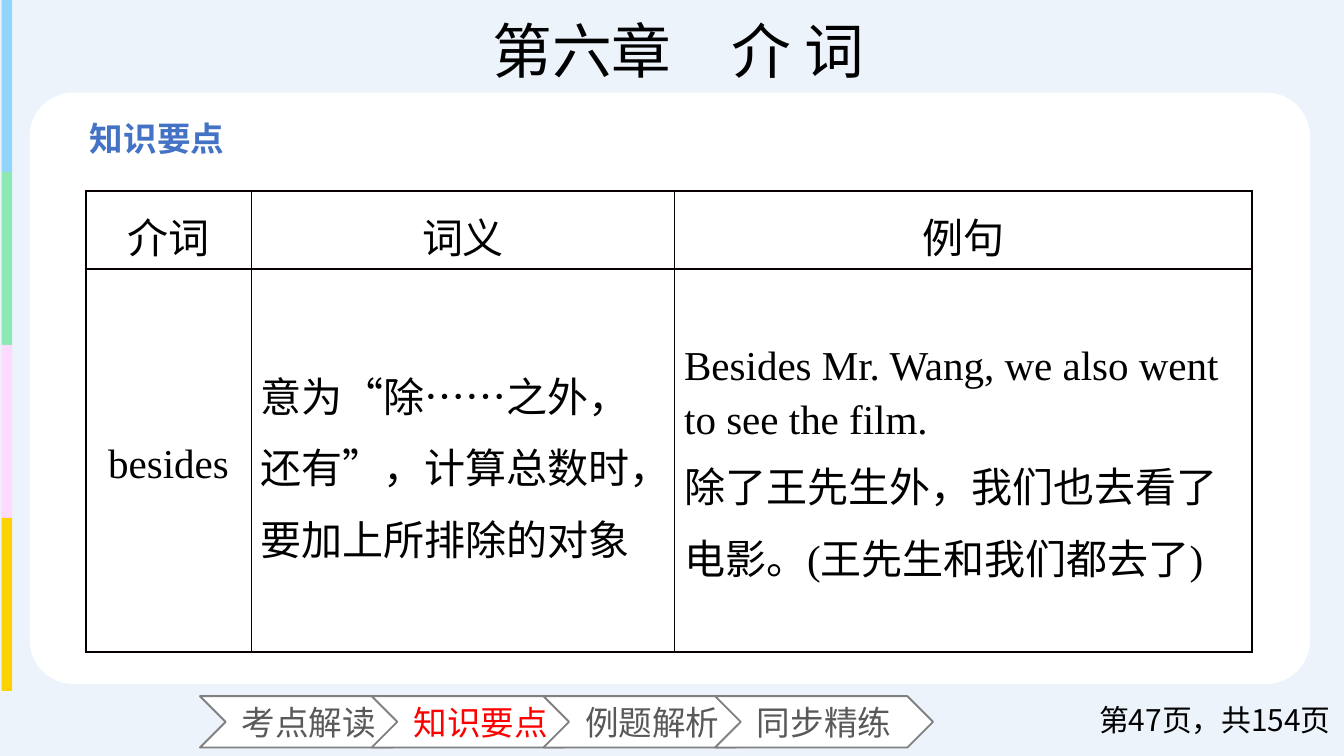
from dataclasses import dataclass

from lxml.etree import SubElement
from pptx import Presentation
from pptx.dml.color import RGBColor
from pptx.enum.shapes import MSO_SHAPE
from pptx.enum.text import MSO_ANCHOR, PP_ALIGN
from pptx.oxml import parse_xml
from pptx.oxml.ns import nsdecls, qn
from pptx.util import Cm, Pt


@dataclass(frozen=True)
class Theme:
    sans: str = "Noto Sans CJK SC"
    serif: str = "Times New Roman"
    background: str = "ECF3FB"
    panel: str = "FFFFFF"
    stripes: tuple = ("91D5FD", "8CE9B4", "FEDAFE", "FBD302")
    ink: str = "000000"
    heading: str = "4472C4"
    tab_text: str = "595959"
    tab_active: str = "FF0000"
    tab_line: str = "808080"
    border: str = "080000"
    title_size: int = 32
    table_size: int = 22
    label_size: int = 18
    footer_size: int = 16


THEME = Theme()
TABS = ("考点解读", "知识要点", "例题解析", "同步精练")
ACTIVE_TAB = "知识要点"
COLUMN_WIDTHS = (3.13, 8, 10.91)
ROW_HEIGHTS = (1.47, 7.24)
ROWS = (
    ("介词", "词义", "例句"),
    (
        "besides",
        "意为“除……之外，还有”，计算总数时，要加上所排除的对象",
        "Besides Mr. Wang, we also went to see the film.\n"
        "除了王先生外，我们也去看了电影。(王先生和我们都去了)",
    ),
)


def write(frame, text, size, color, font=THEME.sans, align=PP_ALIGN.LEFT,
          bold=False, spacing=None):
    frame.word_wrap = True
    frame.text = text
    for para in frame.paragraphs:
        para.alignment = align
        para.line_spacing = spacing
        para.font.name = font
        para.font.size = Pt(size)
        para.font.bold = bold
        para.font.color.rgb = RGBColor.from_string(color)
        defaults = para._p.pPr.find(qn("a:defRPr"))
        SubElement(defaults, qn("a:ea")).set("typeface", THEME.sans)


def add_block(page, kind, left, top, width, height, fill, line=None):
    block = page.shapes.add_shape(kind, Cm(left), Cm(top), Cm(width), Cm(height))
    block.shadow.inherit = False
    block.fill.solid()
    block.fill.fore_color.rgb = RGBColor.from_string(fill)
    if line:
        block.line.color.rgb = RGBColor.from_string(line)
        block.line.width = Pt(1)
    else:
        block.line.fill.background()
    return block


def add_text(page, left, top, width, height, text, size, color,
             anchor=MSO_ANCHOR.TOP, **style):
    box = page.shapes.add_textbox(Cm(left), Cm(top), Cm(width), Cm(height))
    box.text_frame.vertical_anchor = anchor
    write(box.text_frame, text, size, color, **style)


def add_backdrop(page):
    add_block(page, MSO_SHAPE.RECTANGLE, 0, 0, 25.4, 14.29, THEME.background)
    stripe_height = 3.27
    for index, color in enumerate(THEME.stripes):
        add_block(page, MSO_SHAPE.RECTANGLE, 0.03, index * stripe_height - 0.02,
                  0.2, stripe_height, color)
    panel = add_block(page, MSO_SHAPE.ROUNDED_RECTANGLE, 0.56, 1.75, 24.2, 11.18,
                      THEME.panel)
    panel.adjustments[0] = 0.074


def add_tabs(page):
    for index, label in enumerate(TABS):
        tab = add_block(page, MSO_SHAPE.CHEVRON, 3.78 + index * 3.245, 13.16,
                        4.12, 0.97, THEME.panel, THEME.tab_line)
        tab.text_frame.vertical_anchor = MSO_ANCHOR.MIDDLE
        color = THEME.tab_active if label == ACTIVE_TAB else THEME.tab_text
        write(tab.text_frame, label, THEME.label_size, color, align=PP_ALIGN.CENTER)


def add_borders(cell):
    properties = cell._tc.get_or_add_tcPr()
    for index, side in enumerate(("lnL", "lnR", "lnT", "lnB")):
        properties.insert(index, parse_xml(
            f'<a:{side} {nsdecls("a")} w="{Pt(1)}"><a:solidFill>'
            f'<a:srgbClr val="{THEME.border}"/></a:solidFill></a:{side}>'))


def add_preposition_table(page):
    table = page.shapes.add_table(
        len(ROWS), len(COLUMN_WIDTHS), Cm(1.62), Cm(3.61),
        Cm(sum(COLUMN_WIDTHS)), Cm(sum(ROW_HEIGHTS))).table
    table.first_row = table.horz_banding = False
    for column, width in zip(table.columns, COLUMN_WIDTHS):
        column.width = Cm(width)
    for row, height in zip(table.rows, ROW_HEIGHTS):
        row.height = Cm(height)
    for row_index, texts in enumerate(ROWS):
        for column_index, text in enumerate(texts):
            cell = table.cell(row_index, column_index)
            cell.fill.background()
            cell.vertical_anchor = MSO_ANCHOR.MIDDLE
            cell.margin_left = cell.margin_right = Cm(0.18)
            cell.margin_top = cell.margin_bottom = 0
            centred = row_index == 0 or column_index == 0
            write(cell.text_frame, text, THEME.table_size, THEME.ink,
                  font=THEME.serif, spacing=1.2,
                  align=PP_ALIGN.CENTER if centred else PP_ALIGN.LEFT)
            add_borders(cell)


def main():
    deck = Presentation()
    deck.slide_width, deck.slide_height = Cm(25.4), Cm(14.29)
    page = deck.slides.add_slide(deck.slide_layouts[6])
    add_backdrop(page)
    add_text(page, 1.45, 2.11, 4.57, 1.02, "知识要点", THEME.label_size,
             THEME.heading, bold=True)
    add_tabs(page)
    add_text(page, 4.47, 0.13, 16.71, 1.63, "第六章　介 词", THEME.title_size,
             THEME.ink, font=THEME.serif, align=PP_ALIGN.CENTER)
    add_text(page, 20.24, 13.23, 5.16, 0.76, "第47页，共154页", THEME.footer_size,
             THEME.ink, anchor=MSO_ANCHOR.MIDDLE, align=PP_ALIGN.RIGHT)
    add_preposition_table(page)
    deck.save("out.pptx")


if __name__ == "__main__":
    main()
